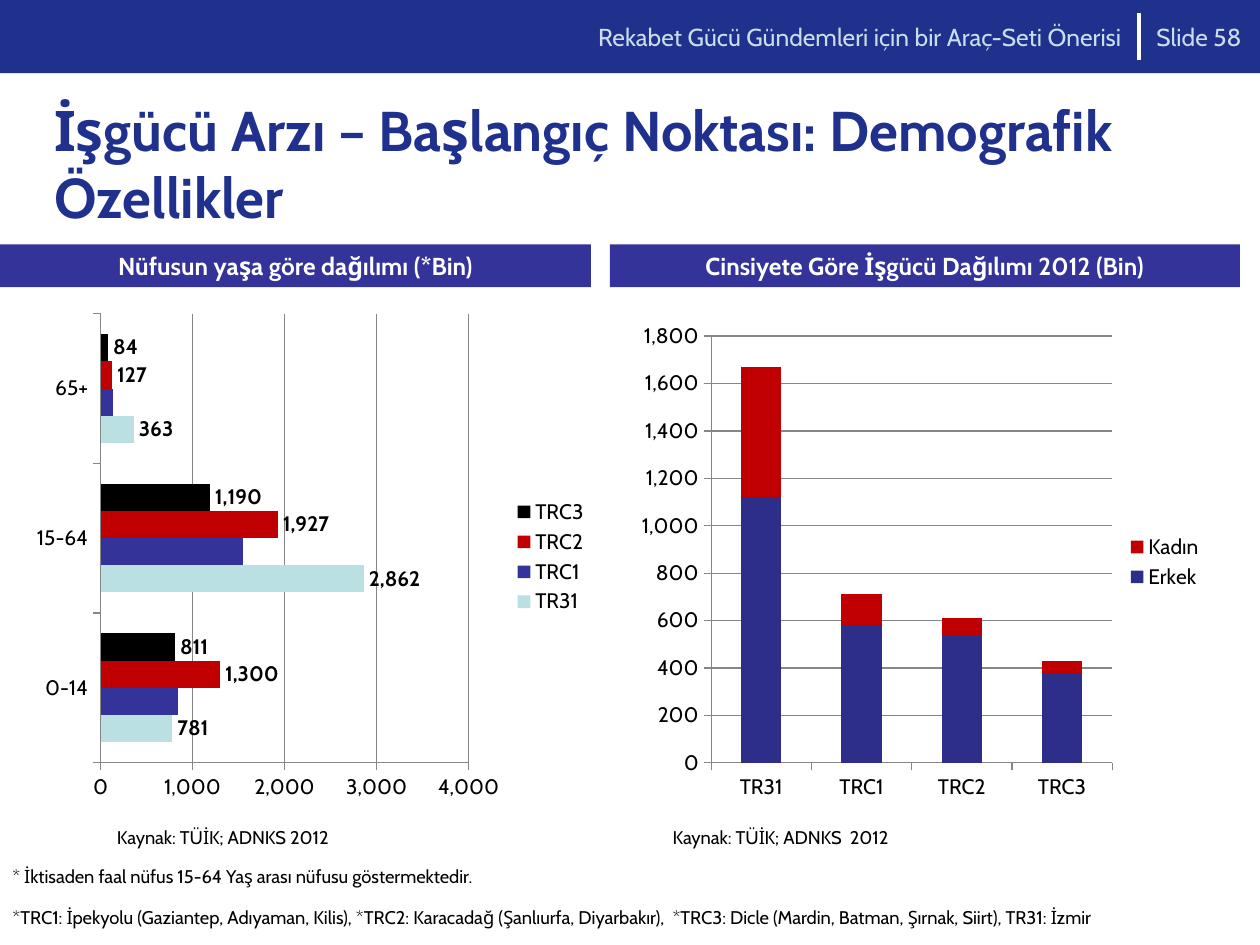
from dataclasses import dataclass

from lxml.etree import SubElement
from pptx import Presentation
from pptx.chart.data import CategoryChartData
from pptx.dml.color import RGBColor
from pptx.enum.chart import XL_CHART_TYPE, XL_LABEL_POSITION, XL_LEGEND_POSITION, XL_TICK_MARK
from pptx.enum.shapes import MSO_CONNECTOR, MSO_SHAPE
from pptx.enum.text import MSO_ANCHOR, PP_ALIGN
from pptx.oxml.ns import qn
from pptx.util import Inches, Pt


@dataclass(frozen=True)
class Theme:
    font: str = "Cabin"
    navy: str = "1F318D"
    indigo: str = "333399"
    deep_indigo: str = "2D2D8A"
    pale: str = "CBDDEB"
    aqua: str = "BBE0E3"
    red: str = "C00000"
    grid: str = "868686"
    black: str = "000000"
    white: str = "FFFFFF"
    title_size: float = 32
    heading_size: float = 14
    chart_size: float = 12
    note_size: float = 10.5


def style_font(font, theme, size, color, bold=False):
    font.name = theme.font
    font.size = Pt(size)
    font.bold = bold
    font.color.rgb = RGBColor.from_string(color)


def write_text(shape, text, *, theme, size, color, bold=False,
               align=PP_ALIGN.LEFT, anchor=MSO_ANCHOR.TOP):
    frame = shape.text_frame
    frame.word_wrap = True
    frame.vertical_anchor = anchor
    paragraph = frame.paragraphs[0]
    paragraph.alignment = align
    run = paragraph.add_run()
    run.text = text
    style_font(run.font, theme, size, color, bold)


class SlideBuilder:
    def __init__(self, slide, theme):
        self.slide = slide
        self.theme = theme

    def title(self, text, box):
        shape = self.slide.shapes.title
        shape.left, shape.top, shape.width, shape.height = map(Inches, box)
        write_text(shape, text, theme=self.theme, size=self.theme.title_size,
                   color=self.theme.navy, bold=True, anchor=MSO_ANCHOR.MIDDLE)

    def text(self, text, box, **style):
        shape = self.slide.shapes.add_textbox(*map(Inches, box))
        write_text(shape, text, theme=self.theme, **style)

    def note(self, text, box):
        self.text(text, box, size=self.theme.note_size, color=self.theme.black)

    def band(self, box, color):
        shape = self.slide.shapes.add_shape(MSO_SHAPE.RECTANGLE, *map(Inches, box))
        shape.shadow.inherit = False
        shape.fill.solid()
        shape.fill.fore_color.rgb = RGBColor.from_string(color)
        shape.line.fill.background()
        return shape

    def heading(self, text, box):
        write_text(self.band(box, self.theme.indigo), text, theme=self.theme,
                   size=self.theme.heading_size, color=self.theme.white, bold=True,
                   align=PP_ALIGN.CENTER, anchor=MSO_ANCHOR.MIDDLE)

    def line(self, start, end, color, width):
        connector = self.slide.shapes.add_connector(
            MSO_CONNECTOR.STRAIGHT, *map(Inches, start + end))
        connector.line.color.rgb = RGBColor.from_string(color)
        connector.line.width = Pt(width)
        SubElement(connector.element.spPr, qn("a:effectLst"))

    def chart(self, kind, box, categories, series, labelled=()):
        chart_data = CategoryChartData(number_format="#,##0")
        chart_data.categories = categories
        for name, values, _ in series:
            chart_data.add_series(name, values)
        frame = self.slide.shapes.add_chart(kind, *map(Inches, box), chart_data)
        chart = frame.chart
        style_font(chart.font, self.theme, self.theme.chart_size, self.theme.black)
        chart.has_title = False
        chart.has_legend = True
        chart.legend.position = XL_LEGEND_POSITION.RIGHT
        chart.legend.include_in_layout = False
        chart.value_axis.has_major_gridlines = True
        chart.value_axis.tick_labels.number_format = "#,##0"
        chart.value_axis.tick_labels.number_format_is_linked = False
        grid_color = RGBColor.from_string(self.theme.grid)
        chart.value_axis.major_gridlines.format.line.color.rgb = grid_color
        for axis in (chart.category_axis, chart.value_axis):
            axis.major_tick_mark = XL_TICK_MARK.OUTSIDE
            axis.format.line.color.rgb = grid_color
        plot = chart.plots[0]
        plot.vary_by_categories = False
        plot.gap_width = 150
        plot.overlap = 100 if kind == XL_CHART_TYPE.COLUMN_STACKED else 0
        for chart_series, (name, _, color) in zip(plot.series, series):
            chart_series.format.fill.solid()
            chart_series.format.fill.fore_color.rgb = RGBColor.from_string(color)
            if name in labelled:
                self.value_labels(chart_series.data_labels)

    def value_labels(self, labels):
        labels.show_value = True
        labels.number_format = "#,##0"
        labels.number_format_is_linked = False
        labels.position = XL_LABEL_POSITION.OUTSIDE_END
        style_font(labels.font, self.theme, self.theme.chart_size, self.theme.black, True)


def main():
    presentation = Presentation()
    presentation.slide_width = Inches(10)
    presentation.slide_height = Inches(7.5)
    theme = Theme()
    slide = presentation.slides.add_slide(presentation.slide_layouts[5])
    builder = SlideBuilder(slide, theme)

    builder.band((0, 0, 10, 0.58), theme.navy)
    builder.line((9.04, 0.1), (9.04, 0.48), theme.white, 2.5)
    header_style = dict(size=theme.heading_size, color=theme.pale, anchor=MSO_ANCHOR.MIDDLE)
    builder.text("Rekabet Gücü Gündemleri için bir Araç-Seti Önerisi",
                 (2.08, 0, 6.92, 0.58), align=PP_ALIGN.RIGHT, **header_style)
    builder.text("Slide 58", (9.08, 0, 0.92, 0.58), **header_style)
    builder.title("İşgücü Arzı – Başlangıç Noktası: Demografik Özellikler",
                  (0.33, 0.83, 9.33, 0.92))

    builder.heading("Nüfusun yaşa göre dağılımı (*Bin)", (0, 1.94, 4.69, 0.34))
    builder.heading("Cinsiyete Göre İşgücü Dağılımı 2012 (Bin)", (4.84, 1.94, 5, 0.34))

    builder.chart(
        XL_CHART_TYPE.BAR_CLUSTERED, (0.2, 2.41, 4.57, 4.02),
        ("0-14", "15-64", "65+"),
        (("TR31", (781, 2862, 363), theme.aqua),
         ("TRC1", (840, 1550, 130), theme.indigo),
         ("TRC2", (1300, 1927, 127), theme.red),
         ("TRC3", (811, 1190, 84), theme.black)),
        labelled=("TR31", "TRC2", "TRC3"))
    builder.chart(
        XL_CHART_TYPE.COLUMN_STACKED, (5, 2.49, 4.65, 3.94),
        ("TR31", "TRC1", "TRC2", "TRC3"),
        (("Erkek", (1120, 580, 540, 380), theme.deep_indigo),
         ("Kadın", (550, 130, 70, 50), theme.red)))

    builder.note("Kaynak: TÜİK; ADNKS 2012", (0.83, 6.51, 2.2, 0.47))
    builder.note("Kaynak: TÜİK; ADNKS  2012", (5.24, 6.51, 2.2, 0.45))
    builder.note("* İktisaden faal nüfus 15-64 Yaş arası nüfusu göstermektedir.",
                 (0, 6.82, 10, 0.28))
    builder.note("*TRC1: İpekyolu (Gaziantep, Adıyaman, Kilis), "
                 "*TRC2: Karacadağ (Şanlıurfa, Diyarbakır),  "
                 "*TRC3: Dicle (Mardin, Batman, Şırnak, Siirt), TR31: İzmir",
                 (0, 7.14, 10, 0.28))
    presentation.save("out.pptx")


if __name__ == "__main__":
    main()
